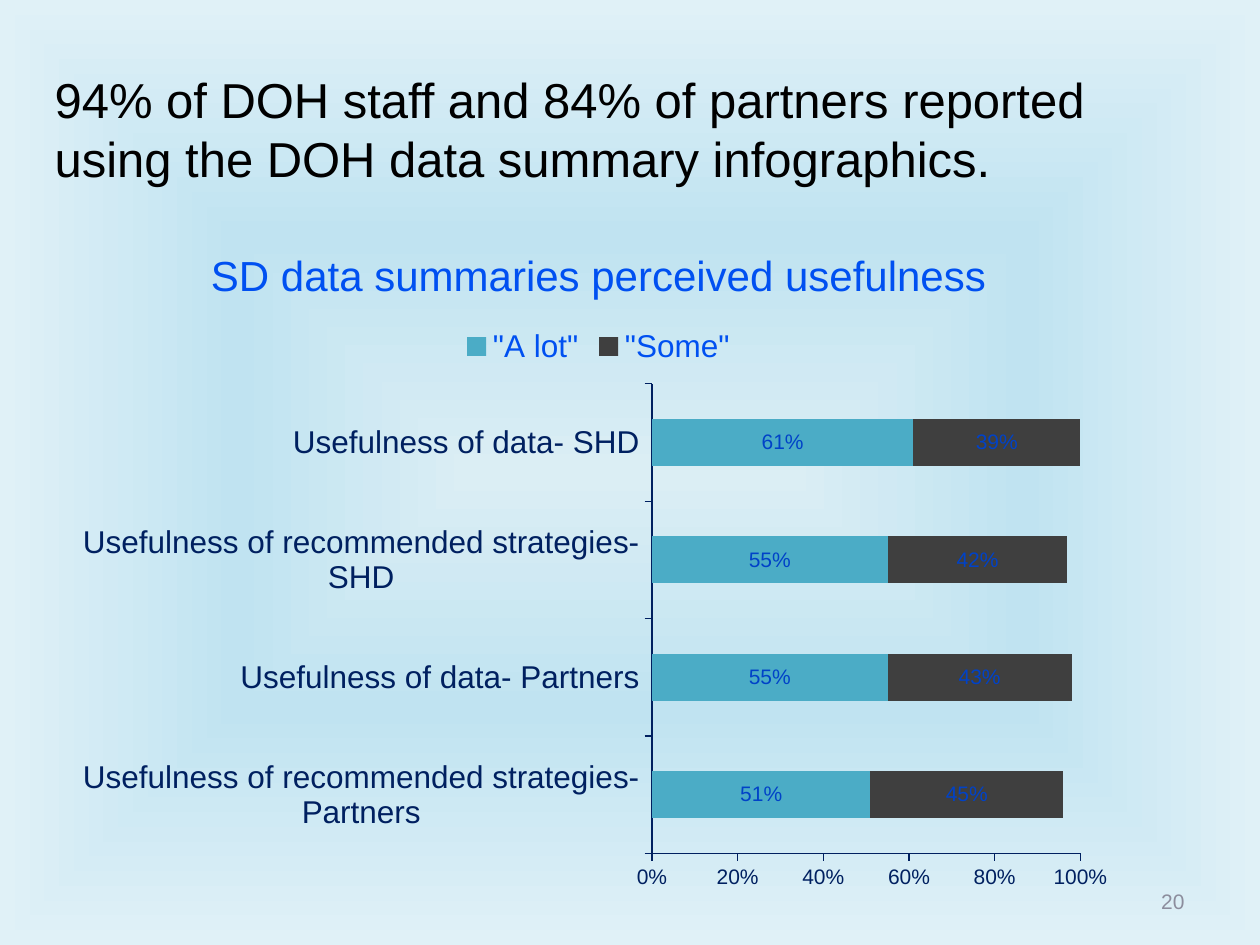
from dataclasses import dataclass

from lxml import etree
from pptx import Presentation
from pptx.chart import data
from pptx.dml.color import RGBColor
from pptx.enum import chart as ch, text
from pptx.oxml import ns, parse_xml
from pptx.util import Pt


@dataclass(frozen=True)
class Theme:
    """Colours, type sizes and font of the slide."""
    font: str = "Arial"
    black: str = "000000"
    navy: str = "002060"
    blue: str = "0050F1"
    label: str = "0042C8"
    grey: str = "8C8D9D"
    bars: tuple = ("4BACC6", "3F3F3F")
    glow: tuple = ("DBEEF4", "C0E3F1", "E0F1F7")
    heading: int = 28
    chart_title: int = 24
    large: int = 18
    small: int = 12
    base: int = 10


T = Theme()
CATEGORIES = ["Usefulness of recommended strategies- Partners",
              "Usefulness of data- Partners",
              "Usefulness of recommended strategies- SHD",
              "Usefulness of data- SHD"]
SERIES = {'"A lot"': (0.51, 0.55, 0.55, 0.61),
          '"Some"': (0.45, 0.43, 0.42, 0.39)}


def style(font, size, color):
    """Give a font the theme face, a size and a colour."""
    font.name, font.size, font.bold = T.font, Pt(size), False
    font.color.rgb = RGBColor.from_string(color)


def write(tf, words, *, size, color, align=text.PP_ALIGN.LEFT,
          anchor=text.MSO_ANCHOR.TOP, before=0):
    """Fill a text frame with one formatted paragraph."""
    tf.word_wrap, tf.auto_size = True, text.MSO_AUTO_SIZE.NONE
    tf.vertical_anchor = anchor
    p = tf.paragraphs[0]
    p.alignment, p.space_before = align, Pt(before)
    r = p.add_run()
    r.text = words
    style(r.font, size, color)


def add_background(s):
    """Fill the background with a gradient that spreads from the centre."""
    s.background.fill.solid()
    solid = s._element.find(".//" + ns.qn("p:bgPr")).find(ns.qn("a:solidFill"))
    stops = "".join(f'<a:gs pos="{i * 50000}"><a:srgbClr val="{c}"/></a:gs>'
                    for i, c in enumerate(T.glow))
    grad = parse_xml(
        f'<a:gradFill {ns.nsdecls("a")} rotWithShape="1"><a:gsLst>{stops}</a:gsLst>'
        '<a:path path="shape"><a:fillToRect l="50000" t="50000" r="50000" b="50000"/>'
        '</a:path></a:gradFill>')
    solid.getparent().replace(solid, grad)


def add_heading(s, box, words):
    """Place the slide title in its box."""
    sp = s.shapes.title
    sp.left, sp.top, sp.width, sp.height = map(Pt, box)
    write(sp.text_frame, words, size=T.heading, color=T.black, before=5.6)


def add_page_number(s, box, words):
    """Place the page number at the right of its box."""
    sp = s.shapes.add_textbox(*map(Pt, box))
    write(sp.text_frame, words, size=T.small, color=T.grey,
          align=text.PP_ALIGN.RIGHT, anchor=text.MSO_ANCHOR.MIDDLE)


def style_axis(axis, size):
    """Format an axis with outer ticks and no gridlines."""
    axis.has_major_gridlines = False
    axis.major_tick_mark = ch.XL_TICK_MARK.OUTSIDE
    axis.minor_tick_mark = ch.XL_TICK_MARK.NONE
    style(axis.tick_labels.font, size, T.navy)
    axis.format.line.color.rgb = RGBColor.from_string(T.navy)
    axis.format.line.width = Pt(0.75)


def set_plot_area(chart, **fractions):
    """Fix the inner plot area as fractions of the chart."""
    area = chart._chartSpace.find(".//" + ns.qn("c:plotArea"))
    for old in area.findall(ns.qn("c:layout")):
        area.remove(old)
    layout = etree.Element(ns.qn("c:layout"))
    manual = etree.SubElement(layout, ns.qn("c:manualLayout"))
    parts = {"layoutTarget": "inner", "xMode": "edge", "yMode": "edge", **fractions}
    for tag, val in parts.items():
        etree.SubElement(manual, ns.qn(f"c:{tag}")).set("val", str(val))
    area.insert(0, layout)


def add_usefulness_chart(s, box, title):
    """Place the stacked bar chart of perceived usefulness."""
    cd = data.CategoryChartData(number_format="0%")
    cd.categories = CATEGORIES
    for name, values in SERIES.items():
        cd.add_series(name, values)
    chart = s.shapes.add_chart(ch.XL_CHART_TYPE.BAR_STACKED, *map(Pt, box), cd).chart
    style(chart.font, T.base, T.navy)

    chart.has_title = True
    write_title = chart.chart_title.text_frame.paragraphs[0].add_run()
    write_title.text = title
    style(write_title.font, T.chart_title, T.blue)
    chart.has_legend = True
    chart.legend.position = ch.XL_LEGEND_POSITION.TOP
    chart.legend.include_in_layout = False
    style(chart.legend.font, T.large, T.blue)

    style_axis(chart.category_axis, T.large)
    axis = chart.value_axis
    style_axis(axis, T.small)
    axis.minimum_scale, axis.maximum_scale, axis.major_unit = 0, 1, 0.2
    axis.tick_labels.number_format = "0%"
    axis.tick_labels.number_format_is_linked = False

    plot = chart.plots[0]
    plot.gap_width, plot.overlap, plot.vary_by_categories = 150, 100, False
    for series, color in zip(plot.series, T.bars):
        series.format.fill.solid()
        series.format.fill.fore_color.rgb = RGBColor.from_string(color)
        labels = series.data_labels
        labels.show_value = True
        labels.number_format, labels.number_format_is_linked = "0%", False
        style(labels.font, T.small, T.label)
    set_plot_area(chart, x=0.55, y=0.24, w=0.4, h=0.69)


def main():
    """Build the slide and save it."""
    prs = Presentation()
    prs.slide_width, prs.slide_height = Pt(720), Pt(540)
    s = prs.slides.add_slide(prs.slide_layouts[5])
    add_background(s)
    add_heading(s, (24, 36, 648, 342),
                "94% of DOH staff and 84% of partners reported using "
                "the DOH data summary infographics.")
    add_page_number(s, (516, 500.5, 168, 28.75), "20")
    add_usefulness_chart(s, (36, 126, 612, 389), "SD data summaries perceived usefulness")
    prs.save("out.pptx")


if __name__ == "__main__":
    main()
